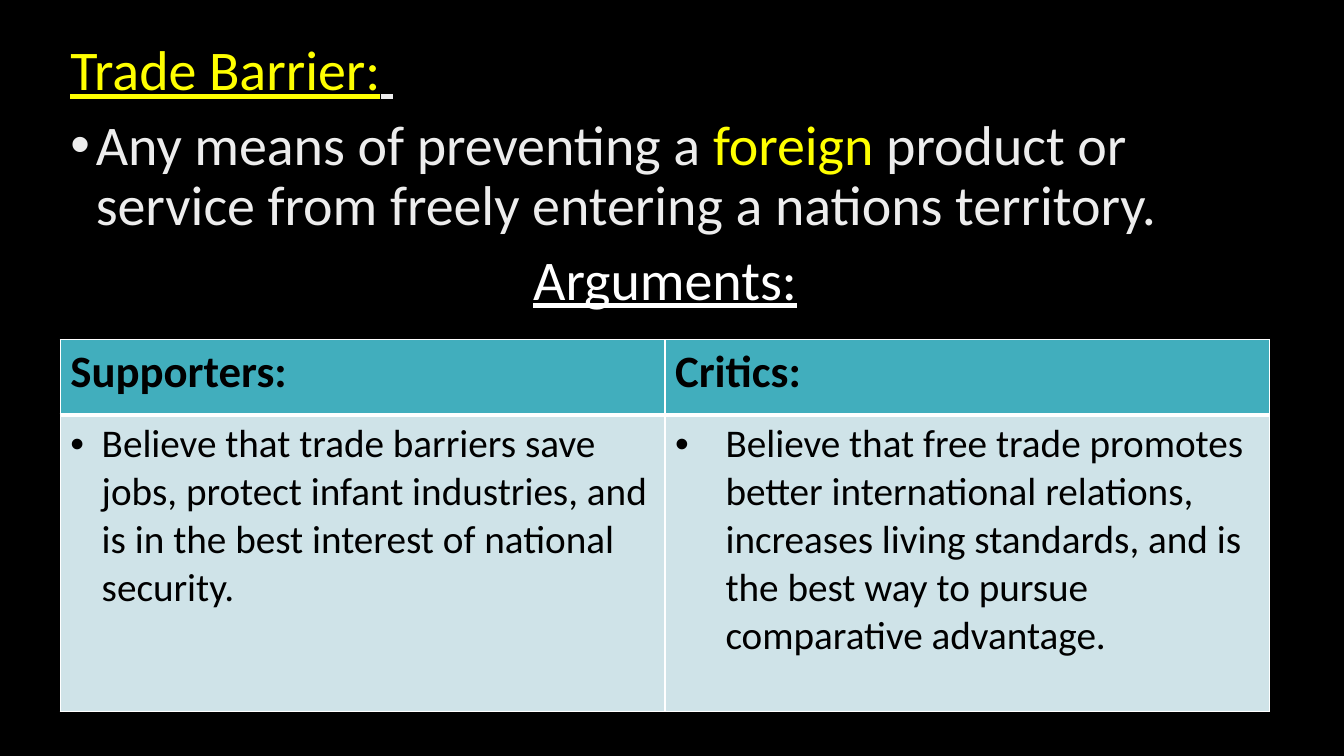
import pptx
import pptx.dml.color
import pptx.enum.text
import pptx.oxml.ns
import pptx.util
from lxml import etree

Cm, Pt = pptx.util.Cm, pptx.util.Pt

FONT = "Calibri"
BLACK, WHITE, PALE, YELLOW = "000000", "FFFFFF", "EDEDED", "FFFF00"
HEADER_FILL, BODY_FILL = "41AEBD", "CFE3E8"

# Each paragraph: bullet indent in cm, centred, runs of (text, colour, underlined)
DEFINITION = [
    (0, False, [("Trade Barrier:", YELLOW, True), (" ", PALE, True)]),
    (0.64, False, [
        ("Any means of preventing a ", PALE, False),
        ("foreign", YELLOW, False),
        (" product or service from freely entering a nations territory.", PALE, False),
    ]),
    (0, True, [("Arguments:", WHITE, True)]),
]

# Each column: heading, bullet indent in cm, argument
ARGUMENTS = [
    ("Supporters:", 0.79,
     "Believe that trade barriers save jobs, protect infant industries, "
     "and is in the best interest of national security."),
    ("Critics:", 1.27,
     "Believe that free trade promotes better international relations, "
     "increases living standards, and is the best way to pursue "
     "comparative advantage."),
]

LEFT, WIDTH = Cm(1.52), Cm(30.48)
ROW_HEIGHTS = [Cm(1.9), Cm(7.47)]


def rgb(value):
    return pptx.dml.color.RGBColor.from_string(value)


def add_child(parent, tag, **attributes):
    return etree.SubElement(parent, pptx.oxml.ns.qn(tag), attributes)


def set_bullet(paragraph, indent):
    properties = paragraph._p.get_or_add_pPr()
    properties.set("marL", str(Cm(indent)))
    properties.set("indent", str(-Cm(indent)))
    if indent:
        add_child(properties, "a:buFont", typeface="Arial")
        add_child(properties, "a:buChar", char="•")
    else:
        add_child(properties, "a:buNone")


def format_run(run, size, color, bold=False, underline=False):
    run.font.name = FONT
    run.font.size = Pt(size)
    run.font.bold = bold
    run.font.underline = underline
    run.font.color.rgb = rgb(color)


def set_borders(cell, top, bottom):
    properties = cell._tc.get_or_add_tcPr()
    for side, width in (("L", 1), ("R", 1), ("T", top), ("B", bottom)):
        line = add_child(properties, f"a:ln{side}", w=str(Pt(width)))
        add_child(add_child(line, "a:solidFill"), "a:srgbClr", val=WHITE)


def fill_cell(cell, text, size, fill, bold=False, indent=0, top=1, bottom=1):
    set_borders(cell, top, bottom)
    cell.fill.solid()
    cell.fill.fore_color.rgb = rgb(fill)
    cell.text_frame.text = text
    paragraph = cell.text_frame.paragraphs[0]
    set_bullet(paragraph, indent)
    format_run(paragraph.runs[0], size, BLACK, bold)


# Slide with a black background and a content placeholder
presentation = pptx.Presentation()
presentation.slide_width, presentation.slide_height = Cm(33.87), Cm(19.05)
slide = presentation.slides.add_slide(presentation.slide_layouts[1])
slide.background.fill.solid()
slide.background.fill.fore_color.rgb = rgb(BLACK)
title = slide.shapes.title._element
title.getparent().remove(title)

# Definition text
definition = slide.placeholders[1]
definition.left, definition.top = LEFT, Cm(0.94)
definition.width, definition.height = WIDTH, Cm(7.24)
text_frame = definition.text_frame
text_frame.word_wrap = True
text_frame.auto_size = pptx.enum.text.MSO_AUTO_SIZE.NONE
for index, (indent, centred, runs) in enumerate(DEFINITION):
    paragraph = text_frame.add_paragraph() if index else text_frame.paragraphs[0]
    set_bullet(paragraph, indent)
    paragraph.line_spacing = 0.9
    paragraph.space_before = Pt(10 if index else 0)
    if centred:
        paragraph.alignment = pptx.enum.text.PP_ALIGN.CENTER
    for text, color, underline in runs:
        run = paragraph.add_run()
        run.text = text
        format_run(run, 40, color, underline=underline)

# Table of arguments
table = slide.shapes.add_table(
    len(ROW_HEIGHTS), len(ARGUMENTS), LEFT, Cm(8.56), WIDTH, sum(ROW_HEIGHTS)).table
for row, height in zip(table.rows, ROW_HEIGHTS):
    row.height = height
for column, (heading, indent, argument) in enumerate(ARGUMENTS):
    fill_cell(table.cell(0, column), heading, 32, HEADER_FILL, bold=True, bottom=3)
    fill_cell(table.cell(1, column), argument, 28, BODY_FILL, indent=indent, top=3)

presentation.save("out.pptx")
